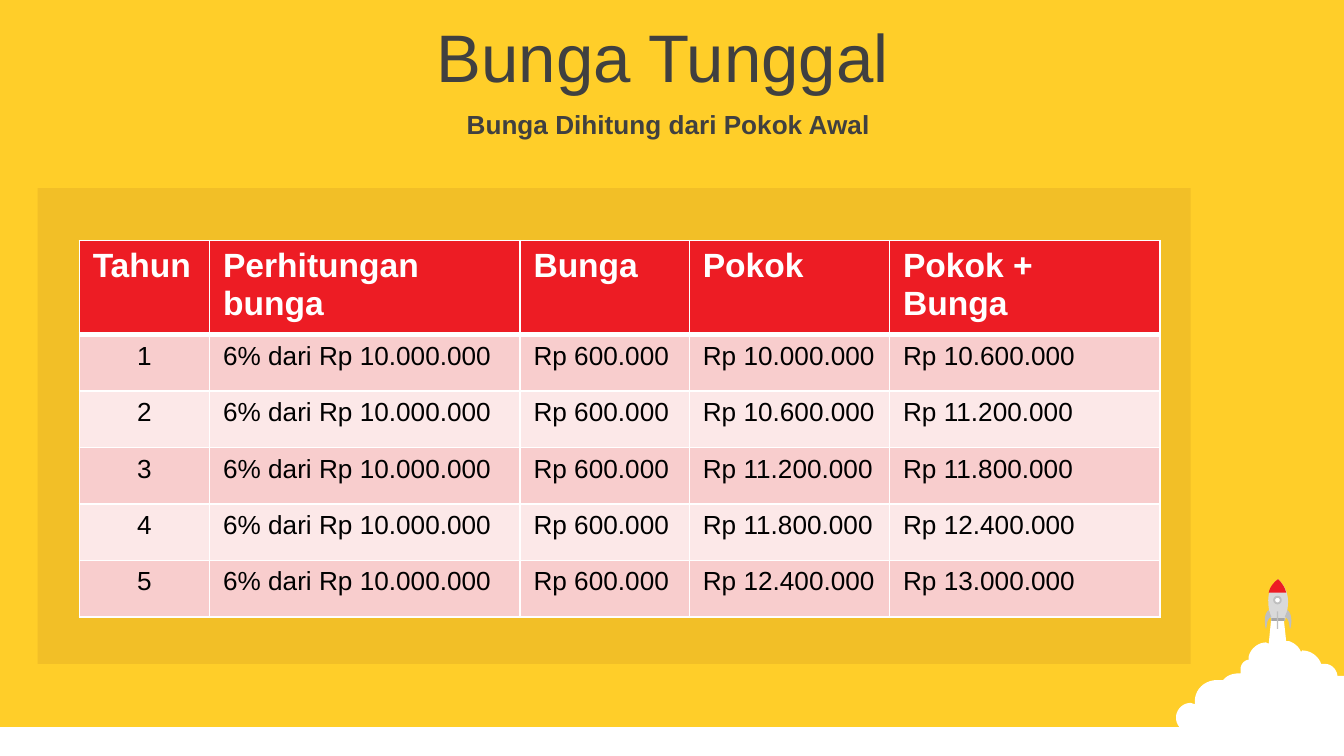
"""Build the simple-interest slide on a grid of 100 columns by 56.25 rows."""
from dataclasses import dataclass

import lxml.etree
import pptx
import pptx.dml.color
import pptx.enum.shapes
import pptx.enum.text
import pptx.oxml.ns
import pptx.util

COLS, ROWS = 100, 56.25
CELL = pptx.util.Inches(10) / COLS
FONT = "Arial"
AXIS = 95.1
PRINCIPAL, INTEREST = 10_000_000, 600_000
COLORS = {
    "yellow": "FFCE29", "panel": "F2BF27", "white": "FFFFFF", "text": "404040",
    "red": "ED1C24", "odd": "F8CDCD", "even": "FCE8E8", "black": "000000",
    "hull": "D9D9D9", "band": "A6A6A6", "fin": "BFBFBF",
}
SHAPES = pptx.enum.shapes.MSO_SHAPE
CENTER = pptx.enum.text.PP_ALIGN.CENTER


@dataclass(frozen=True)
class Box:
    left: float
    top: float
    width: float
    height: float

    def emu(self) -> list[int]:
        return [grid(v) for v in (self.left, self.top, self.width, self.height)]


@dataclass(frozen=True)
class Block:
    box: Box
    color: str
    kind: SHAPES = SHAPES.RECTANGLE
    line: str | None = None


@dataclass(frozen=True)
class Outline:
    color: str
    steps: list[tuple]


@dataclass(frozen=True)
class Heading:
    text: str
    box: Box
    size: int
    bold: bool


@dataclass(frozen=True)
class Column:
    title: str
    width: float
    values: list[str]


def grid(cells: float) -> int:
    return round(cells * CELL)


def rgb(name: str) -> pptx.dml.color.RGBColor:
    return pptx.dml.color.RGBColor.from_string(COLORS[name])


def rupiah(amount: int) -> str:
    return f"Rp {amount:,}".replace(",", ".")


def paint(sp, color: str, line: str | None = None) -> None:
    sp.shadow.inherit = False
    sp.fill.solid()
    sp.fill.fore_color.rgb = rgb(color)
    if line:
        sp.line.color.rgb = rgb(line)
        sp.line.width = pptx.util.Pt(1)
    else:
        sp.line.fill.background()


def add_block(s, block: Block) -> None:
    paint(s.shapes.add_shape(block.kind, *block.box.emu()), block.color, block.line)


def flatten(steps: list[tuple], parts: int = 10) -> list[tuple[float, float]]:
    points = [steps[0]]
    for step in steps[1:]:
        if len(step) == 2:
            points.append(step)
            continue
        ends = (points[-1], step[:2], step[2:4], step[4:])
        for i in range(1, parts + 1):
            t = i / parts
            weights = ((1 - t) ** 3, 3 * t * (1 - t) ** 2, 3 * t * t * (1 - t), t ** 3)
            points.append(tuple(sum(w * e[k] for w, e in zip(weights, ends)) for k in (0, 1)))
    return points


def add_outline(s, outline: Outline) -> None:
    points = [(grid(x), grid(y)) for x, y in flatten(outline.steps)]
    builder = s.shapes.build_freeform(*points[0], scale=1.0)
    builder.add_line_segments(points[1:], close=True)
    paint(builder.convert_to_shape(), outline.color)


def mirror(steps: list[tuple]) -> list[tuple]:
    return [tuple(2 * AXIS - v if i % 2 == 0 else v for i, v in enumerate(step)) for step in steps]


def style(tf, size: int, color: str, bold: bool) -> None:
    for p in tf.paragraphs:
        for r in p.runs:
            r.font.name, r.font.size, r.font.bold = FONT, pptx.util.Pt(size), bold
            r.font.color.rgb = rgb(color)


def add_heading(s, heading: Heading) -> None:
    tf = s.shapes.add_textbox(*heading.box.emu()).text_frame
    tf.word_wrap = True
    tf.vertical_anchor = pptx.enum.text.MSO_ANCHOR.MIDDLE
    tf.text = heading.text
    tf.paragraphs[0].alignment = CENTER
    style(tf, heading.size, "text", heading.bold)


def add_borders(cell, widths: dict[str, int]) -> None:
    tc_pr = cell._tc.get_or_add_tcPr()
    qn = pptx.oxml.ns.qn
    for i, (side, width) in enumerate(widths.items()):
        ln = lxml.etree.Element(qn(f"a:ln{side}"), w=str(pptx.util.Pt(width)))
        fill = lxml.etree.SubElement(ln, qn("a:solidFill"))
        lxml.etree.SubElement(fill, qn("a:srgbClr"), val=COLORS["white"])
        tc_pr.insert(i, ln)


def add_table(s, left: float, top: float, heights: list[float], columns: list[Column]) -> None:
    box = Box(left, top, sum(c.width for c in columns), sum(heights))
    table = s.shapes.add_table(len(heights), len(columns), *box.emu()).table
    table.first_row = table.horz_banding = False
    for row, height in zip(table.rows, heights):
        row.height = grid(height)
    for x, column in enumerate(columns):
        table.columns[x].width = grid(column.width)
        for y, text in enumerate([column.title, *column.values]):
            cell = table.cell(y, x)
            head = y == 0
            cell.text_frame.text = text
            cell.fill.solid()
            cell.fill.fore_color.rgb = rgb("red" if head else "odd" if y % 2 else "even")
            style(cell.text_frame, 18 if head else 14, "white" if head else "black", head)
            if x == 0 and not head:
                cell.text_frame.paragraphs[0].alignment = CENTER
            add_borders(cell, {"L": 1, "R": 1, "T": 3 if y == 1 else 1, "B": 3 if head else 1})


CLOUD = [
    (94.6, 45.9), (95.5, 45.9), (95.7, 47.7), (95.9, 47.7), (96.2, 47.8, 96.5, 48, 96.7, 48.3),
    (96.8, 48.5), (96.9, 48.4), (97.5, 48.4, 98.1, 48.8, 98.3, 49.4), (98.6, 49.4),
    (99, 49.4, 99.4, 49.7, 99.5, 50.2), (99.5, 50.3), (100, 50.3), (100, 56), (87.7, 56),
    (88.6, 54.5), (88, 54.5, 87.5, 54, 87.5, 53.4), (87.5, 52.8, 88, 52.3, 88.6, 52.3),
    (88.9, 52.4), (88.9, 52.2), (88.9, 51.3, 89.6, 50.6, 90.6, 50.6), (91, 50.6), (91.1, 50.5),
    (91.4, 50.2, 91.8, 50.1, 92.3, 50.1), (92.3, 49.8), (92.3, 49.5, 92.5, 49.2, 92.8, 49.1),
    (92.9, 49.1), (92.9, 48.9), (93, 48.3, 93.6, 47.8, 94.2, 47.8), (94.4, 47.9),
]
HULL = [(94.6, 46.2), (94.4, 45.3, 94, 44, 95.1, 43.1), (96.2, 44.1, 95.8, 45.4, 95.6, 46.2)]
NOSE = [(95.1, 43.1), (95.4, 43.4, 95.6, 43.7, 95.7, 44.1), (94.4, 44.1), (94.5, 43.7, 94.7, 43.4, 95.1, 43.1)]
FIN = [(94.4, 45.4), (94.6, 45.9), (94.2, 46.1, 94.3, 46.6, 94.2, 46.8), (94.1, 46.5, 94, 45.7, 94.4, 45.4)]
SCENERY = [
    Block(Box(0, 54.1, COLS, ROWS - 54.1), "white"),
    Outline("white", CLOUD),
    Outline("hull", HULL),
    Block(Box(94.6, 46, 1, 0.2), "band"),
    Outline("red", NOSE),
    Block(Box(94.8, 44.4, 0.5, 0.5), "white", SHAPES.OVAL, "fin"),
    Block(Box(95, 45.5, 0.1, 1.3), "fin"),
    Outline("fin", FIN),
    Outline("fin", mirror(FIN)),
    Block(Box(2.8, 14, 85.8, 35.4), "panel"),
]
HEADINGS = [
    Heading("Bunga Tunggal ", Box(0, 1.4, COLS, 5.5), 36, False),
    Heading("Bunga Dihitung dari Pokok Awal ", Box(0, 7.7, COLS, 3.1), 14, True),
]
YEARS = range(1, 6)
TABLE = [
    Column("Tahun", 9.7, [str(y) for y in YEARS]),
    Column("Perhitungan\nbunga", 23.1, [f"6% dari {rupiah(PRINCIPAL)}" for _ in YEARS]),
    Column("Bunga", 12.6, [rupiah(INTEREST) for _ in YEARS]),
    Column("Pokok", 14.9, [rupiah(PRINCIPAL + INTEREST * (y - 1)) for y in YEARS]),
    Column("Pokok +\nBunga", 20.1, [rupiah(PRINCIPAL + INTEREST * y) for y in YEARS]),
]


def main() -> None:
    prs = pptx.Presentation()
    prs.slide_width, prs.slide_height = grid(COLS), grid(ROWS)
    s = prs.slides.add_slide(prs.slide_layouts[6])
    s.background.fill.solid()
    s.background.fill.fore_color.rgb = rgb("yellow")
    for item in SCENERY:
        (add_block if isinstance(item, Block) else add_outline)(s, item)
    for heading in HEADINGS:
        add_heading(s, heading)
    add_table(s, 5.9, 17.9, [6.6] + [4.2] * len(YEARS), TABLE)
    prs.save("out.pptx")


if __name__ == "__main__":
    main()
